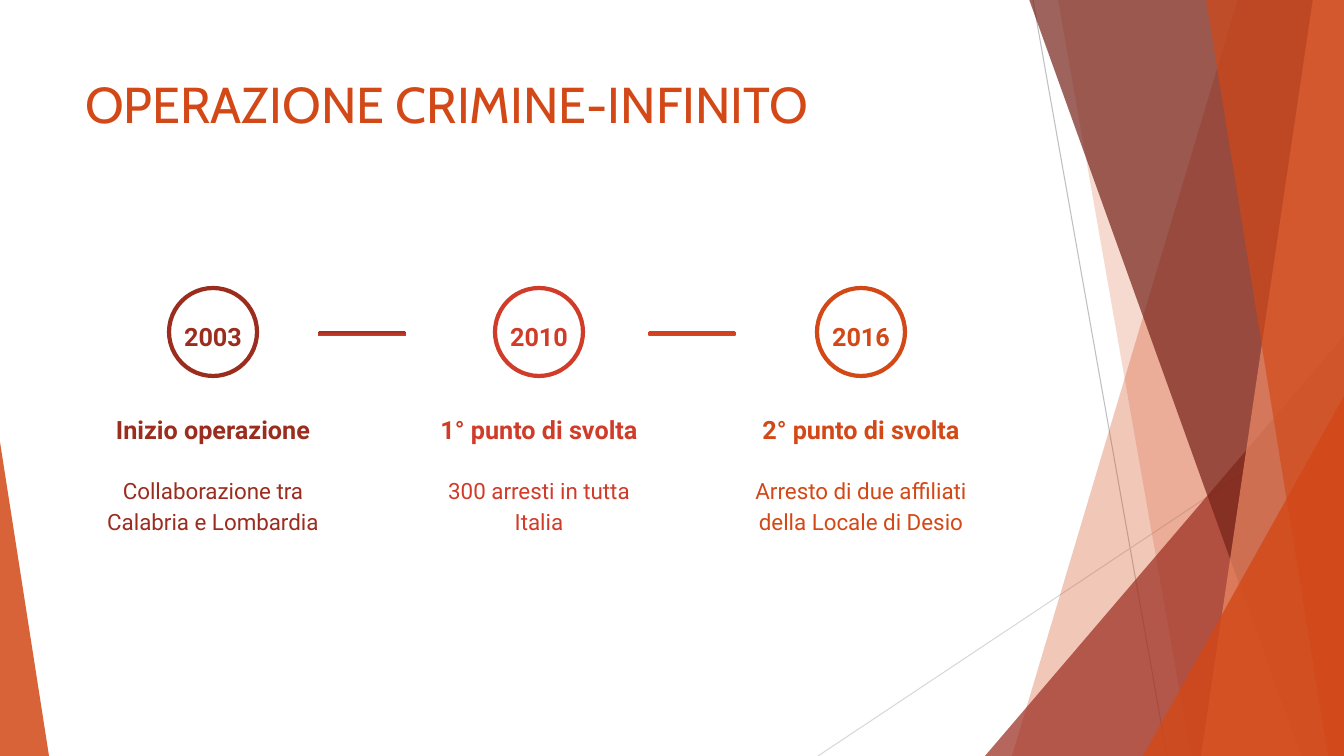
import pptx
import pptx.util
import pptx.dml.color
import pptx.enum.shapes
import pptx.enum.text
import pptx.oxml
import pptx.oxml.ns

PX = 914400 / 100.8
W, H = 1344, 756
ORANGE, RED, DARK = "D34817", "D03C29", "9B2D1F"
SHAPE = pptx.enum.shapes.MSO_SHAPE
ALIGN = pptx.enum.text.PP_ALIGN
ANCHOR = pptx.enum.text.MSO_ANCHOR


def px(n):
    return pptx.util.Emu(round(n * PX))


def rgb(value):
    return pptx.dml.color.RGBColor.from_string(value)


def add_run(p, text, font, size, color, bold=False):
    r = p.add_run()
    r.text = text
    r.font.name = font
    r.font.size = pptx.util.Pt(size)
    r.font.bold = bold
    r.font.color.rgb = rgb(color)


def set_glass(sp, color, alpha):
    sp.shadow.inherit = False
    sp.line.fill.background()
    sp.fill.solid()
    sp.fill.fore_color.rgb = rgb(color)
    clr = sp.fill._xPr.find(".//" + pptx.oxml.ns.qn("a:srgbClr"))
    clr.append(pptx.oxml.parse_xml(
        f'<a:alpha {pptx.oxml.ns.nsdecls("a")} val="{alpha * 1000}"/>'))


def add_facet(s, points, color, alpha):
    fb = s.shapes.build_freeform(*points[0], scale=PX)
    fb.add_line_segments(points[1:], close=True)
    set_glass(fb.convert_to_shape(), color, alpha)


def add_triangle(s, x, y, w, apex, color, alpha):
    sp = s.shapes.add_shape(SHAPE.ISOSCELES_TRIANGLE, px(x), px(y), px(w), px(H - y))
    sp.adjustments[0] = apex
    set_glass(sp, color, alpha)


def add_hairline(s, x1, y1, x2, y2, color):
    cx = s.shapes.add_connector(pptx.enum.shapes.MSO_CONNECTOR.STRAIGHT,
                                px(x1), px(y1), px(x2), px(y2))
    cx.line.color.rgb = rgb(color)
    cx.line.width = pptx.util.Pt(0.75)
    cx._element.spPr.append(pptx.oxml.parse_xml(
        f'<a:effectLst {pptx.oxml.ns.nsdecls("a")}/>'))


def add_decoration(s):
    add_hairline(s, 1033, 0, 1167, H, "BFBFBF")
    add_hairline(s, W, 406, 818, H, "D8D8D8")
    add_facet(s, [(1238, -1), (W, -1), (W, H), (1012, H)], ORANGE, 30)
    add_facet(s, [(1058, -1), (W, -1), (W, H), (1191, H)], ORANGE, 20)
    add_triangle(s, 985, 336, 359, 1, DARK, 72)
    add_facet(s, [(1029, -1), (W, -1), (W, H), (1301, H)], "742117", 70)
    add_facet(s, [(1313, -1), (W, -1), (W, H), (1201, H)], "EF8B67", 70)
    add_facet(s, [(1206, -1), (W, -1), (W, H), (1328, H)], ORANGE, 65)
    add_triangle(s, 1143, 396, 201, 1, ORANGE, 80)
    add_triangle(s, 0, 442, 49, 0, ORANGE, 85)


def add_title(s, text):
    sp = s.shapes.title
    sp.left, sp.top, sp.width, sp.height = px(75), px(68), px(947), px(145)
    tf = sp.text_frame
    tf.auto_size = pptx.enum.text.MSO_AUTO_SIZE.NONE
    tf.vertical_anchor = ANCHOR.TOP
    p = tf.paragraphs[0]
    p.alignment = ALIGN.LEFT
    add_run(p, text, "Cabin", 36, ORANGE)


def add_label(s, center, y, w, h, text, size, color, bold=False, anchor=ANCHOR.TOP):
    tf = s.shapes.add_textbox(px(center - w / 2), px(y), px(w), px(h)).text_frame
    tf.word_wrap = True
    tf.vertical_anchor = anchor
    tf.margin_left = tf.margin_right = tf.margin_top = tf.margin_bottom = px(13)
    p = tf.paragraphs[0]
    p.alignment = ALIGN.CENTER
    p.line_spacing = 1.15
    add_run(p, text, "Roboto", size, color, bold)


def add_ring(s, center, color):
    sp = s.shapes.add_shape(SHAPE.OVAL, px(center - 44), px(288), px(88), px(88))
    sp.shadow.inherit = False
    sp.fill.background()
    sp.line.color.rgb = rgb(color)
    sp.line.width = pptx.util.Pt(3)


def add_bar(s, x, start, end):
    sp = s.shapes.add_shape(SHAPE.ROUNDED_RECTANGLE, px(x), px(331), px(88), px(5))
    sp.adjustments[0] = 0.5
    sp.shadow.inherit = False
    sp.line.fill.background()
    sp.fill.gradient()
    sp.fill.gradient_angle = 270
    for stop, color in zip(sp.fill.gradient_stops, (start, end)):
        stop.color.rgb = rgb(color)


def add_milestone(s, center, year, heading, body, body_width, color):
    add_ring(s, center, color)
    add_label(s, center, 304, 93, 47, year, 18, color, True)
    add_label(s, center, 392, 251, 66, heading, 18, color, True, ANCHOR.BOTTOM)
    add_label(s, center, 460, body_width, 109, body, 16, color)


def main():
    prs = pptx.Presentation()
    prs.slide_width, prs.slide_height = px(W), px(H)
    s = prs.slides.add_slide(prs.slide_layouts[5])
    add_decoration(s)
    add_title(s, "OPERAZIONE CRIMINE-INFINITO")
    milestones = [
        (213, "2003", "Inizio operazione",
         "Collaborazione tra Calabria e Lombardia", 258, DARK),
        (539, "2010", "1° punto di svolta",
         "300 arresti in tutta Italia", 251, RED),
        (861, "2016", "2° punto di svolta",
         "Arresto di due affiliati della Locale di Desio", 251, ORANGE),
    ]
    for milestone in milestones:
        add_milestone(s, *milestone)
    add_bar(s, 318, DARK, RED)
    add_bar(s, 648, RED, ORANGE)
    prs.save("out.pptx")


if __name__ == "__main__":
    main()
